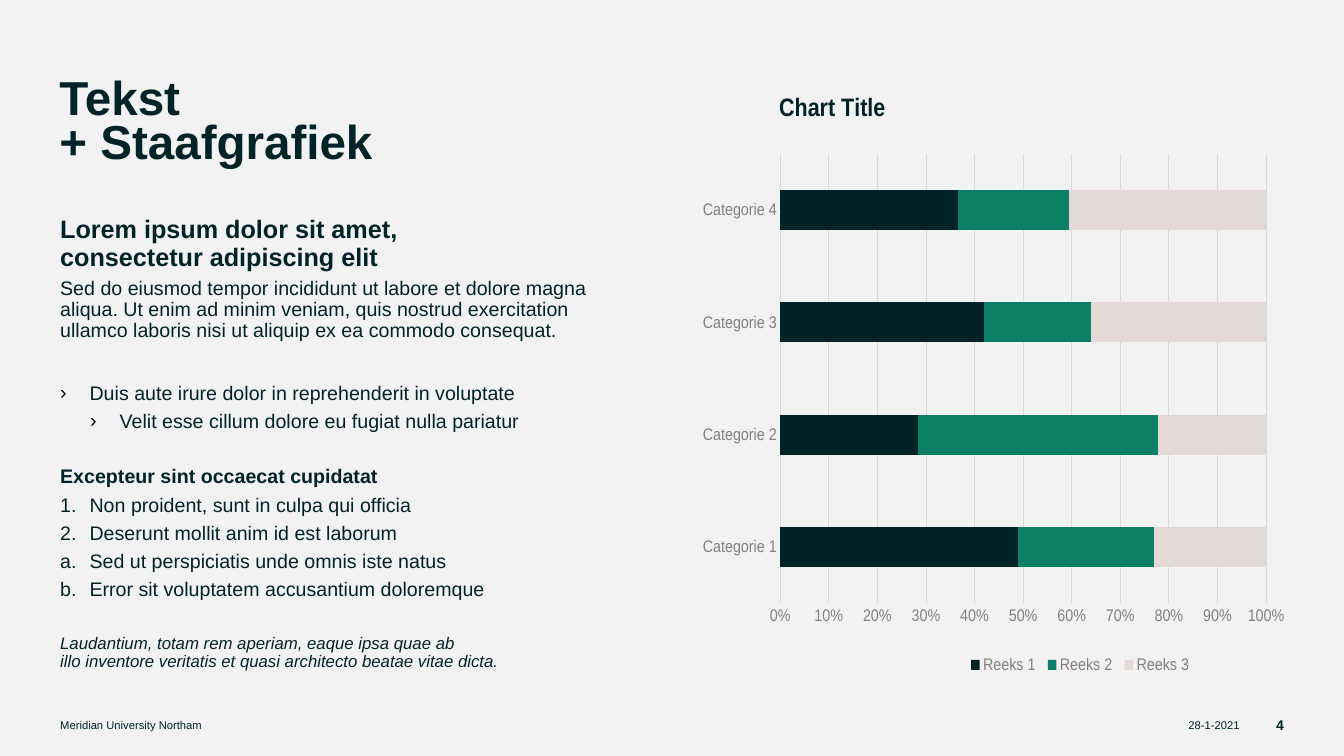
"""Build a slide with text on the left and a 100% stacked bar chart on the right."""
from lxml import etree
from pptx import Presentation
from pptx.chart.data import CategoryChartData
from pptx.dml.color import RGBColor
from pptx.enum.chart import XL_CHART_TYPE, XL_LEGEND_POSITION, XL_TICK_MARK
from pptx.enum.text import MSO_ANCHOR, PP_ALIGN
from pptx.oxml.ns import qn
from pptx.util import Pt

STACKED = XL_CHART_TYPE.BAR_STACKED_100
LEGEND_BOTTOM = XL_LEGEND_POSITION.BOTTOM
NO_TICK = XL_TICK_MARK.NONE
TOP, MIDDLE = MSO_ANCHOR.TOP, MSO_ANCHOR.MIDDLE
LEFT, RIGHT = PP_ALIGN.LEFT, PP_ALIGN.RIGHT
FONT = "Arial"
COLORS = {"background": "F2F2F2", "ink": "002328", "green": "0C8066", "sand": "E3DAD8",
          "label": "808080", "grid": "D9D9D9", "bullet": "000000"}


def style_font(font, size, color, bold=False, italic=False):
    """Set typeface, size, colour and weight."""
    font.name, font.size, font.bold, font.italic = FONT, Pt(size), bold, italic
    font.color.rgb = RGBColor.from_string(COLORS[color])


def set_layout(parent, position, target=None, **fractions):
    """Place a chart part by fractions of the chart area."""
    for old in parent.findall(qn("c:layout")):
        parent.remove(old)
    layout = etree.Element(qn("c:layout"))
    manual = etree.SubElement(layout, qn("c:manualLayout"))
    if target:
        etree.SubElement(manual, qn("c:layoutTarget")).set("val", target)
    for axis in ("x", "y"):
        etree.SubElement(manual, qn(f"c:{axis}Mode")).set("val", "edge")
    for key, value in fractions.items():
        etree.SubElement(manual, qn(f"c:{key}")).set("val", str(value))
    parent.insert(position, layout)


prs = Presentation()
prs.slide_width, prs.slide_height = Pt(960), Pt(540)
slide = prs.slides.add_slide(prs.slide_layouts[6])
slide.background.fill.solid()
slide.background.fill.fore_color.rgb = RGBColor.from_string(COLORS["background"])

plain = dict(size=14, before=5)
heading = dict(size=18, before=5, bold=True)
body = [
    (["Lorem ipsum dolor sit amet,", "consectetur adipiscing elit"], heading),
    (["Sed do eiusmod tempor incididunt ut labore et dolore magna aliqua. "
      "Ut enim ad minim veniam, quis nostrud exercitation",
      "ullamco laboris nisi ut aliquip ex ea commodo consequat."], plain),
    (["Duis aute irure dolor in reprehenderit in voluptate"],
     dict(size=14, before=29.5, bullet="›", indent=21)),
    (["Velit esse cillum dolore eu fugiat nulla pariatur"],
     dict(size=14, before=5, bullet="›", indent=42.5, level=1)),
    (["Excepteur sint occaecat cupidatat"], dict(size=14, before=24.5, bold=True)),
    (["Non proident, sunt in culpa qui officia"], dict(plain, number="arabicPeriod", indent=21)),
    (["Deserunt mollit anim id est laborum"], dict(plain, number="arabicPeriod", indent=21)),
    (["Sed ut perspiciatis unde omnis iste natus"], dict(plain, number="alphaLcPeriod", indent=21)),
    (["Error sit voluptatem accusantium doloremque"], dict(plain, number="alphaLcPeriod", indent=21)),
    (["Laudantium, totam rem aperiam, eaque ipsa quae ab",
      "illo inventore veritatis et quasi architecto beatae vitae dicta."],
     dict(size=12, before=24.5, italic=True)),
]
title = [(["Tekst", "+ Staafgrafiek"], dict(size=34, bold=True, spacing=Pt(32)))]
blocks = [
    ((42.5, 57, 416, 56), TOP, LEFT, title),
    ((43, 155, 415.5, 342), TOP, LEFT, body),
    ((43, 512.5, 777, 10), MIDDLE, LEFT,
     [(["Meridian University Northam"], dict(size=8, spacing=1.0))]),
    ((831, 512.5, 54.5, 10), MIDDLE, RIGHT, [(["28-1-2021"], dict(size=8, spacing=1.0))]),
    ((896.5, 512.5, 20.5, 10), MIDDLE, RIGHT, [(["4"], dict(size=10, bold=True, spacing=1.0))]),
]
for box, anchor, align, paragraphs in blocks:
    frame = slide.shapes.add_textbox(*map(Pt, box)).text_frame
    frame.word_wrap = True
    frame.vertical_anchor = anchor
    frame.margin_left = frame.margin_top = frame.margin_right = frame.margin_bottom = 0
    for index, (lines, look) in enumerate(paragraphs):
        paragraph = frame.add_paragraph() if index else frame.paragraphs[0]
        paragraph.alignment = align
        paragraph.level = look.get("level", 0)
        paragraph.line_spacing = look.get("spacing", 0.9)
        paragraph.space_before = Pt(look.get("before", 0))
        for line_index, line in enumerate(lines):
            if line_index:
                paragraph.add_line_break()
            run = paragraph.add_run()
            run.text = line
            style_font(run.font, look["size"], "ink", look.get("bold", False),
                       look.get("italic", False))
        if "indent" in look:
            properties = paragraph._p.get_or_add_pPr()
            properties.set("marL", str(Pt(look["indent"])))
            properties.set("indent", str(-Pt(21)))
            if "bullet" in look:
                bullet_color = etree.SubElement(properties, qn("a:buClr"))
                etree.SubElement(bullet_color, qn("a:srgbClr")).set("val", COLORS["bullet"])
                etree.SubElement(properties, qn("a:buFont")).set("typeface", FONT)
                etree.SubElement(properties, qn("a:buChar")).set("char", look["bullet"])
            else:
                etree.SubElement(properties, qn("a:buFont")).set("typeface", FONT)
                etree.SubElement(properties, qn("a:buAutoNum")).set("type", look["number"])

series_rows = [("Reeks 1", (49, 28, 42, 37), "ink"),
               ("Reeks 2", (28, 49, 22, 23), "green"),
               ("Reeks 3", (23, 22, 36, 41), "sand")]
chart_data = CategoryChartData()
chart_data.categories = [f"Categorie {number}" for number in range(1, 5)]
for name, values, _ in series_rows:
    chart_data.add_series(name, values)
chart = slide.shapes.add_chart(STACKED, Pt(502), Pt(57), Pt(415.5), Pt(440), chart_data).chart
style_font(chart.font, 10, "bullet")

chart.has_title = True
chart_title = chart.chart_title.text_frame.paragraphs[0].add_run()
chart_title.text = "Chart Title"
style_font(chart_title.font, 18, "ink", bold=True)

chart.has_legend = True
chart.legend.position = LEGEND_BOTTOM
chart.legend.include_in_layout = False
style_font(chart.legend.font, 12, "label")

bars = chart.plots[0]
bars.gap_width, bars.overlap, bars.vary_by_categories = 182, 100, False
for series, (_, _, color) in zip(bars.series, series_rows):
    series.format.fill.solid()
    series.format.fill.fore_color.rgb = RGBColor.from_string(COLORS[color])

for axis in (chart.category_axis, chart.value_axis):
    axis.major_tick_mark = axis.minor_tick_mark = NO_TICK
    style_font(axis.tick_labels.font, 12, "label")
chart.category_axis.has_major_gridlines = False
chart.value_axis.has_major_gridlines = True
for line in (chart.category_axis.format.line, chart.value_axis.major_gridlines.format.line):
    line.color.rgb = RGBColor.from_string(COLORS["grid"])
    line.width = Pt(0.75)
chart.value_axis.format.line.fill.background()
chart.value_axis.tick_labels.number_format = "0%"
chart.value_axis.tick_labels.number_format_is_linked = False

chart_space = chart._chartSpace
set_layout(chart_space.xpath("c:chart/c:title")[0], 1, x=0.01, y=0.01)
set_layout(chart_space.xpath("c:chart/c:plotArea")[0], 0, "inner", x=0.02, y=0.12, w=0.98, h=0.73)
set_layout(chart_space.xpath("c:chart/c:legend")[0], 1, x=0.39, y=0.92, w=0.47, h=0.06)

prs.save("out.pptx")
